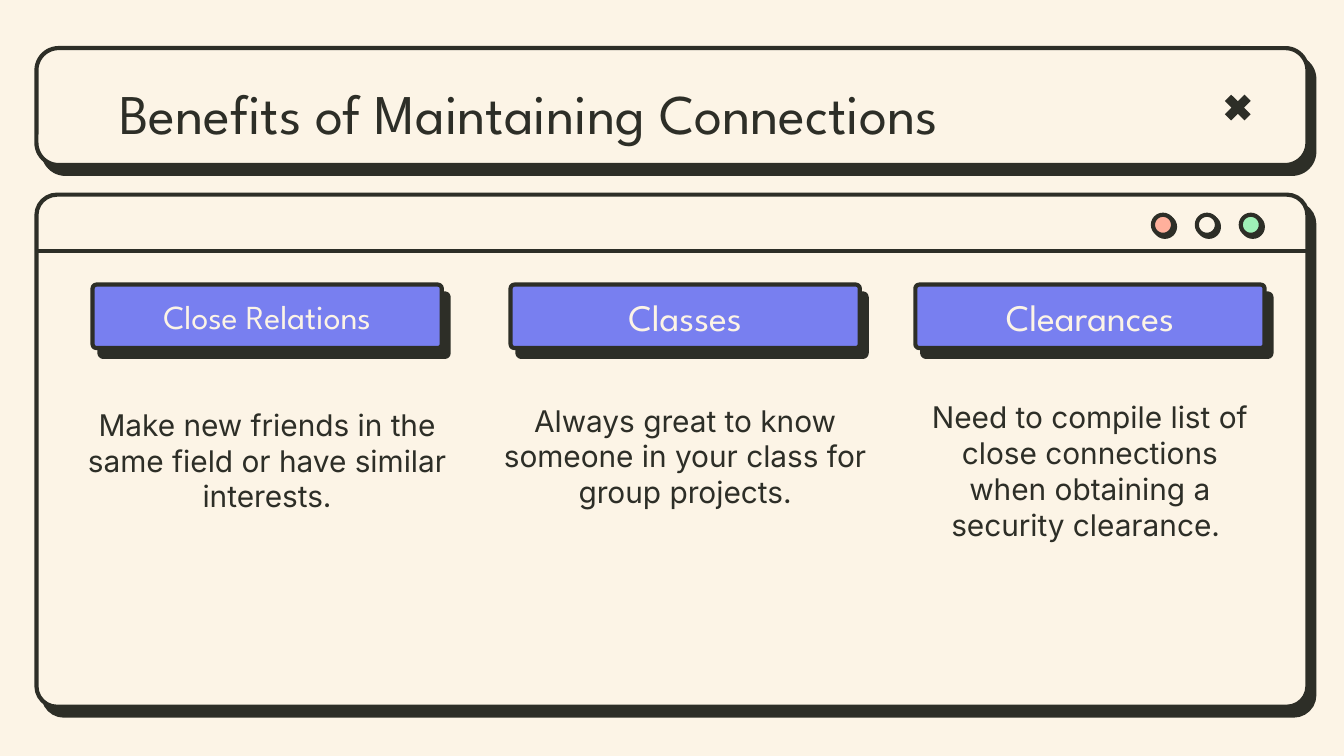
"""Build a window-style slide on the benefits of maintaining connections."""
import dataclasses

import pptx
import pptx.dml.color
import pptx.enum.shapes
import pptx.enum.text
import pptx.oxml.ns
import pptx.util
from lxml import etree

Cm = pptx.util.Cm
Pt = pptx.util.Pt
RGB = pptx.dml.color.RGBColor.from_string
MSO = pptx.enum.shapes.MSO_SHAPE
ALIGN = pptx.enum.text.PP_ALIGN
ANCHOR = pptx.enum.text.MSO_ANCHOR
qn = pptx.oxml.ns.qn


@dataclasses.dataclass(frozen=True)
class Theme:
    cream: str = "FCF4E6"
    ink: str = "2D2E27"
    violet: str = "787FF0"
    coral: str = "FFB09C"
    mint: str = "9FF1B7"
    heading_font: str = "League Spartan"
    body_font: str = "Inter"
    title_size: int = 30
    label_size: int = 20
    small_label_size: int = 18
    body_size: int = 16
    line_width: float = 2.25


theme = Theme()
prs = pptx.Presentation()
prs.slide_width, prs.slide_height = Cm(25.4), Cm(14.29)
s = prs.slides.add_slide(prs.slide_layouts[6])
s.background.fill.solid()
s.background.fill.fore_color.rgb = RGB(theme.cream)


def add_box(kind, x, y, w, h, fill, radius=None, offset=6, angle=52):
    sp = s.shapes.add_shape(kind, Cm(x), Cm(y), Cm(w), Cm(h))
    if radius is not None:
        sp.adjustments[0] = radius
    sp.fill.solid()
    sp.fill.fore_color.rgb = RGB(fill)
    sp.line.color.rgb = RGB(theme.ink)
    sp.line.width = Pt(theme.line_width)
    sp.shadow.inherit = False
    effects = sp.element.spPr.find(qn("a:effectLst"))
    shadow = etree.SubElement(effects, qn("a:outerShdw"), blurRad="0", dist=str(Pt(offset)),
                              dir=str(angle * 60000), algn="bl", rotWithShape="0")
    etree.SubElement(shadow, qn("a:srgbClr"), val=theme.ink)


def add_text(text, *, x, y, w, h, size, font=theme.body_font, color=theme.ink,
             align=ALIGN.CENTER, anchor=ANCHOR.MIDDLE):
    tf = s.shapes.add_textbox(Cm(x), Cm(y), Cm(w), Cm(h)).text_frame
    tf.word_wrap = True
    tf.vertical_anchor = anchor
    tf.margin_left = tf.margin_right = tf.margin_top = tf.margin_bottom = Cm(0.25)
    p = tf.paragraphs[0]
    p.alignment = align
    r = p.add_run()
    r.text = text
    r.font.name = font
    r.font.size = Pt(size)
    r.font.color.rgb = RGB(color)


add_box(MSO.ROUNDED_RECTANGLE, 0.69, 3.68, 24.02, 9.68, theme.cream, radius=0.04)
for i, color in enumerate((theme.coral, theme.cream, theme.mint)):
    add_box(MSO.OVAL, 21.79 + i * 0.83, 4.06, 0.38, 0.38, color, offset=1.5, angle=45)

divider = s.shapes.add_connector(pptx.enum.shapes.MSO_CONNECTOR.STRAIGHT,
                                 Cm(0.69), Cm(4.75), Cm(24.7), Cm(4.75))
divider.line.color.rgb = RGB(theme.ink)
divider.line.width = Pt(theme.line_width)
etree.SubElement(divider.element.spPr, qn("a:effectLst"))

add_box(MSO.ROUNDED_RECTANGLE, 0.69, 0.91, 24.02, 2.21, theme.cream, radius=0.19)
close = s.shapes.add_shape(MSO.MATH_MULTIPLY, Cm(23.04), Cm(1.68), Cm(0.71), Cm(0.71))
close.shadow.inherit = False
close.fill.solid()
close.fill.fore_color.rgb = RGB(theme.ink)
close.line.fill.background()

add_text("Benefits of Maintaining Connections", x=2, y=1.24, w=21.41, h=1.6,
         size=theme.title_size, font=theme.heading_font, align=ALIGN.LEFT, anchor=ANCHOR.TOP)

columns = [
    (1.75, "Close Relations", theme.small_label_size,
     "Make new friends in the same field or have similar interests.", (1.2, 7.52, 7.7, 2.36)),
    (9.65, "Classes", theme.label_size,
     "Always great to know someone in your class for group projects.", (9.1, 7.44, 7.7, 2.36)),
    (17.3, "Clearances", theme.label_size,
     "Need to compile list of close connections when obtaining a security clearance. ",
     (17.3, 6.76, 6.6, 4.27)),
]
for left, label, label_size, body, (x, y, w, h) in columns:
    add_box(MSO.ROUNDED_RECTANGLE, left, 5.38, 6.6, 1.2, theme.violet, radius=0.06)
    add_text(label, x=left + 0.45, y=5.38, w=5.7, h=1.2, size=label_size,
             font=theme.heading_font, color=theme.cream)
    add_text(body, x=x, y=y, w=w, h=h, size=theme.body_size)

prs.save("out.pptx")
